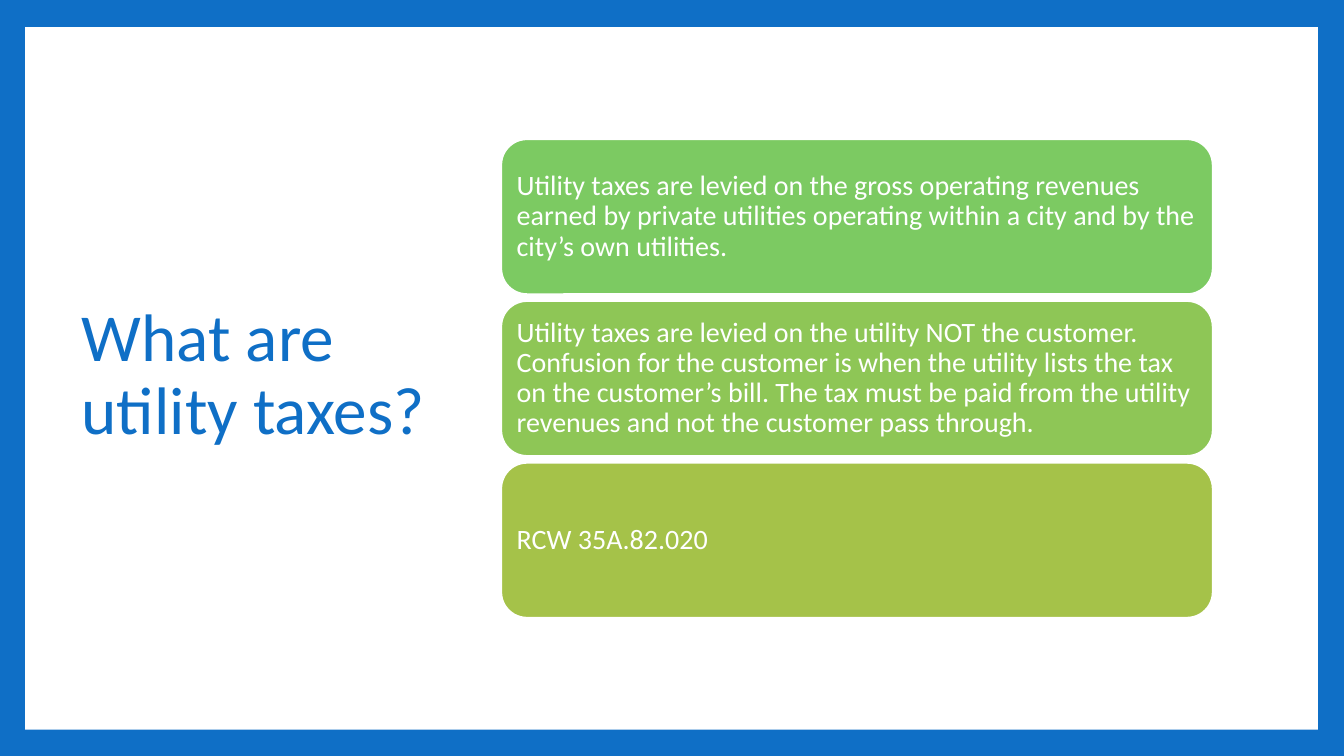
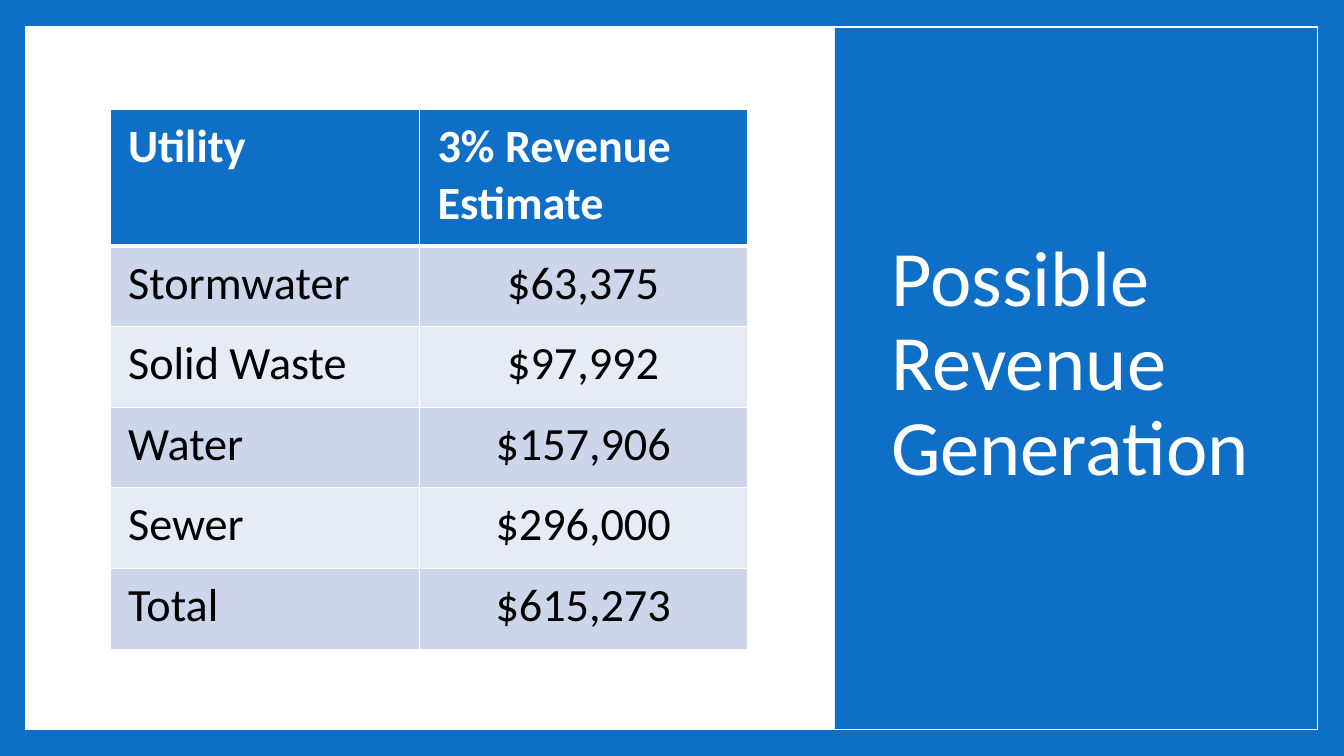
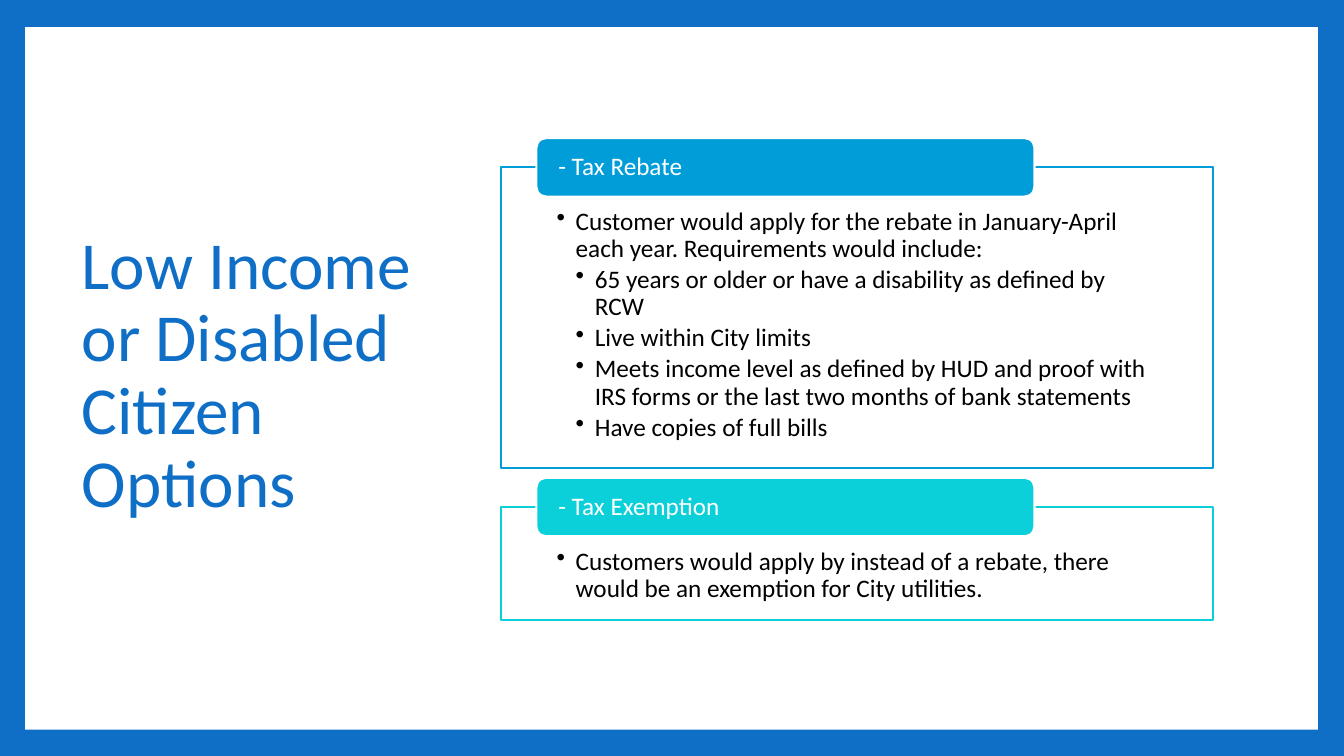
"""Build three slides on city utility taxes."""
from dataclasses import dataclass

from lxml import etree
from pptx import Presentation
from pptx.dml.color import RGBColor
from pptx.enum import shapes, text
from pptx.oxml import ns
from pptx.util import Inches, Pt


@dataclass(frozen=True)
class Theme:
    font: str = "Calibri"
    blue: str = "0F6FC6"
    sky: str = "009DD9"
    aqua: str = "0BD0D9"
    greens: tuple = ("7CCA62", "8EC656", "A5C249")
    bands: tuple = ("CCD5EA", "E7EBF5")
    white: str = "FFFFFF"
    black: str = "000000"
    title: int = 48
    large_title: int = 56
    table: int = 33
    card: int = 20
    detail: int = 18


theme = Theme()
rectangle = shapes.MSO_SHAPE.RECTANGLE
rounded = shapes.MSO_SHAPE.ROUNDED_RECTANGLE


def add_block(page, kind, place, fill=None, line=None, weight=1.5, insets=(0, 0, 0, 0)):
    block = page.shapes.add_shape(kind, *map(Inches, place))
    block.shadow.inherit = False
    if fill:
        block.fill.solid()
        block.fill.fore_color.rgb = RGBColor.from_string(fill)
    else:
        block.fill.background()
    if line:
        block.line.color.rgb = RGBColor.from_string(line)
        block.line.width = Pt(weight)
    else:
        block.line.fill.background()
    frame = block.text_frame
    frame.word_wrap = True
    frame.margin_left, frame.margin_top, frame.margin_right, frame.margin_bottom = map(Inches, insets)
    return block


def write(para, words, size, color, bold=False, spacing=0.9, align=text.PP_ALIGN.LEFT):
    para.alignment = align
    para.line_spacing = spacing
    span = para.add_run()
    span.text = words
    span.font.name = theme.font
    span.font.size = Pt(size)
    span.font.bold = bold
    span.font.color.rgb = RGBColor.from_string(color)


deck = Presentation()
deck.slide_width, deck.slide_height = Inches(13.33), Inches(7.5)
layout = deck.slide_layouts[5]
layout.background.fill.solid()
layout.background.fill.fore_color.rgb = RGBColor.from_string(theme.blue)

titles = [
    ("What are utility taxes?", (0.71, 0.67, 3.68, 6.13), theme.title, theme.blue),
    ("Possible Revenue Generation", (8.74, 0.67, 3.91, 5.91), theme.large_title, theme.white),
    ("Low Income or Disabled Citizen Options", (0.71, 0.67, 3.68, 6.13), theme.title, theme.blue),
]
pages = []
for words, place, size, color in titles:
    page = deck.slides.add_slide(layout)
    title = page.shapes.title
    title.left, title.top, title.width, title.height = map(Inches, place)
    title.text_frame.word_wrap = True
    title.text_frame.auto_size = text.MSO_AUTO_SIZE.NONE
    title.text_frame.vertical_anchor = text.MSO_ANCHOR.MIDDLE
    write(title.text_frame.paragraphs[0], words, size, color)
    pages.append(page)
definition_page, revenue_page, options_page = pages

panel_place = (0.25, 0.27, 12.82, 6.97)
panel = add_block(definition_page, rectangle, panel_place, theme.white)
layout.shapes.element.insert(2, panel.element)

facts = [
    "Utility taxes are levied on the gross operating revenues earned by private utilities "
    "operating within a city and by the city’s own utilities.",
    "Utility taxes are levied on the utility NOT the customer. Confusion for the customer is "
    "when the utility lists the tax on the customer’s bill. The tax must be paid from the "
    "utility revenues and not the customer pass through.",
    "RCW 35A.82.020",
]
for index, (fact, green) in enumerate(zip(facts, theme.greens)):
    card = add_block(definition_page, rounded, (4.97, 1.38 + index * 1.605, 7.06, 1.54),
                     green, theme.white, insets=(0.08,) * 4)
    write(card.text_frame.paragraphs[0], fact, theme.card, theme.white)

add_block(revenue_page, rectangle, (8.28, 0, 5.05, 7.5), theme.blue)
add_block(revenue_page, rectangle, panel_place, line=theme.white, weight=1)
revenue_page.shapes.element.append(revenue_page.shapes.title.element)

revenues = [
    ("Utility", "3% Revenue Estimate"),
    ("Stormwater", "$63,375"),
    ("Solid Waste", "$97,992"),
    ("Water", "$157,906"),
    ("Sewer", "$296,000"),
    ("Total", "$615,273"),
]
table = revenue_page.shapes.add_table(
    len(revenues), 2, Inches(1.09), Inches(1.09), Inches(6.32), Inches(5.35)).table
for column, width in zip(table.columns, (3.07, 3.25)):
    column.width = Inches(width)
for row_index, values in enumerate(revenues):
    header = row_index == 0
    table.rows[row_index].height = Inches(1.35 if header else 0.8)
    for column_index, value in enumerate(values):
        cell = table.cell(row_index, column_index)
        cell.margin_left = cell.margin_right = Inches(0.18)
        cell.margin_top = cell.margin_bottom = Inches(0.09)
        centred = column_index == 1 and not header
        write(cell.text_frame.paragraphs[0], value, theme.table,
              theme.white if header else theme.black, header, 1,
              text.PP_ALIGN.CENTER if centred else text.PP_ALIGN.LEFT)
        properties = cell._tc.get_or_add_tcPr()
        for side in ("L", "R", "T", "B"):
            thick = (row_index, side) in ((0, "B"), (1, "T"))
            border = etree.SubElement(properties, ns.qn(f"a:ln{side}"), w=str(Pt(3 if thick else 1)))
            paint = etree.SubElement(border, ns.qn("a:solidFill"))
            etree.SubElement(paint, ns.qn("a:srgbClr"), val=theme.white)
        cell.fill.solid()
        cell.fill.fore_color.rgb = RGBColor.from_string(
            theme.blue if header else theme.bands[(row_index - 1) % 2])

options = [
    ("- Tax Rebate", theme.sky, 1.66, 2.98, [
        (1, "Customer would apply for the rebate in January-April each year. "
            "Requirements would include:"),
        (2, "65 years or older or have a disability as defined by RCW"),
        (2, "Live within City limits"),
        (2, "Meets income level as defined by HUD and proof with IRS forms or the last two "
            "months of bank statements"),
        (2, "Have copies of full bills"),
    ]),
    ("- Tax Exemption", theme.aqua, 5.03, 1.12, [
        (1, "Customers would apply by instead of a rebate, there would be an exemption for "
            "City utilities."),
    ]),
]
for heading, color, top, height, details in options:
    body = add_block(options_page, rectangle, (4.97, top, 7.06, height), theme.white, color,
                     insets=(0.55, 0.41, 0.55, 0.14))
    frame = body.text_frame
    frame.vertical_anchor = text.MSO_ANCHOR.TOP
    for index, (level, detail) in enumerate(details):
        para = frame.add_paragraph() if index else frame.paragraphs[0]
        properties = para._p.get_or_add_pPr()
        properties.set("marL", str(Inches(0.19 * level)))
        properties.set("indent", str(Inches(-0.19)))
        etree.SubElement(properties, ns.qn("a:buChar"), char="•")
        para.level = level - 1
        para.space_after = Pt(2.7)
        write(para, detail, theme.detail, theme.black)
    tab = add_block(options_page, rounded, (5.32, top - 0.29, 4.94, 0.58), color, theme.white,
                    insets=(0.19, 0, 0.19, 0))
    write(tab.text_frame.paragraphs[0], heading, theme.detail, theme.white)

deck.save("out.pptx")
